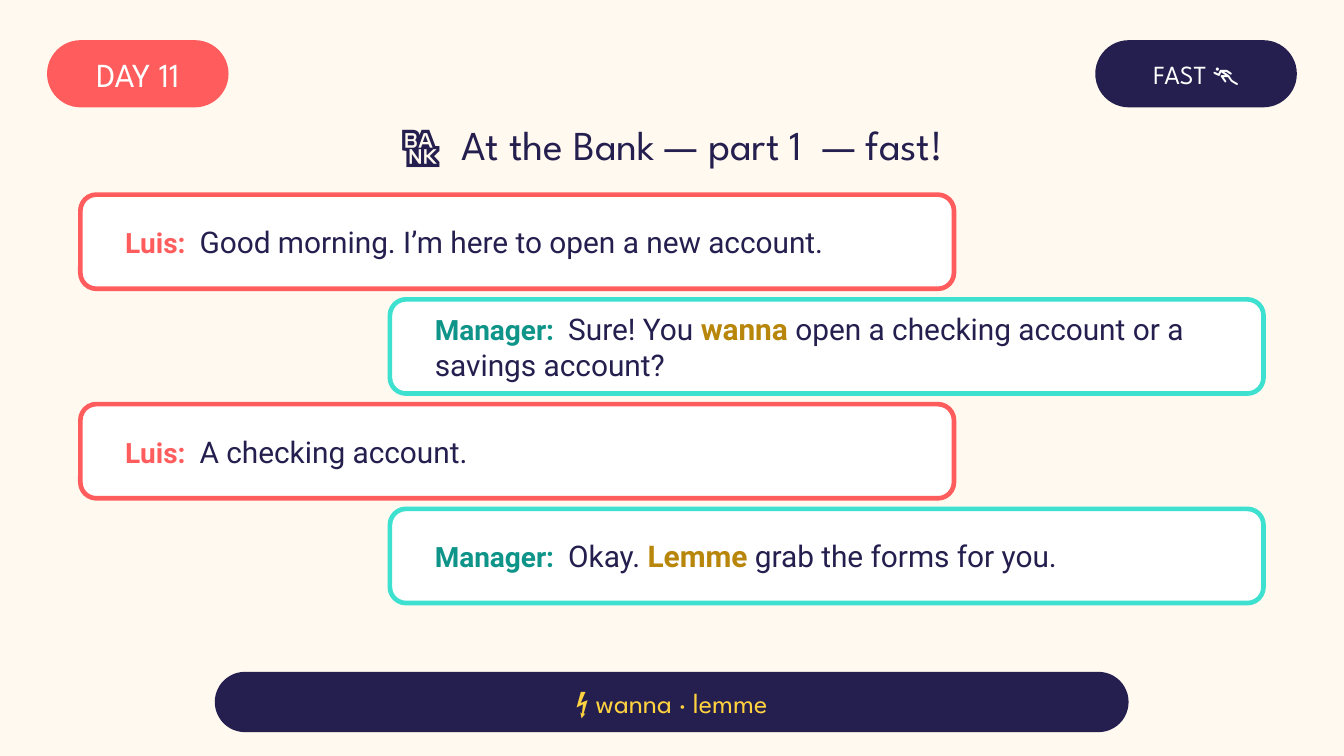
from pptx import Presentation
from pptx.dml.color import RGBColor
from pptx.enum.shapes import MSO_SHAPE as Shape
from pptx.enum.text import MSO_ANCHOR as Anchor, MSO_AUTO_SIZE as AutoSize, PP_ALIGN as Align
from pptx.util import Cm, Pt

HEADING_FONT, BODY_FONT = "League Spartan", "Roboto"
NAVY, CORAL, TURQUOISE, TEAL = "241F4E", "FF5D5D", "3EE0CF", "0E9488"
GOLD, YELLOW, WHITE, CREAM = "B8860B", "FFD23F", "FFFFFF", "FFF9EF"

# Speaker: (side of the dialogue, outline colour, name colour)
SPEAKERS = {
    "Luis": ("left", CORAL, CORAL),
    "Manager": ("right", TURQUOISE, TEAL),
}
# Each line: speaker, words before the reduced form, reduced form, words after
DIALOGUE = [
    ("Luis", "Good morning. I’m here to open a new account.", "", ""),
    ("Manager", "Sure! You ", "wanna", " open a checking account or a savings account?"),
    ("Luis", "A checking account.", "", ""),
    ("Manager", "Okay. ", "Lemme", " grab the forms for you."),
]


def rgb(value):
    return RGBColor.from_string(value)


def style(font, size, color, name=None, bold=None):
    font.size = Pt(size)
    font.color.rgb = rgb(color)
    if name:
        font.name = name
    if bold is not None:
        font.bold = bold


def add_rounded(slide, box, fill, corner, outline=None):
    """Add a rounded rectangle; box is left, top, width, height in cm."""
    rounded = slide.shapes.add_shape(Shape.ROUNDED_RECTANGLE, *map(Cm, box))
    rounded.adjustments[0] = corner
    rounded.shadow.inherit = False
    rounded.fill.solid()
    rounded.fill.fore_color.rgb = rgb(fill)
    if outline:
        rounded.line.color.rgb = rgb(outline)
        rounded.line.width = Pt(2.5)
    else:
        rounded.line.fill.background()
    return rounded


def set_frame(frame, side_inset):
    frame.word_wrap = True
    frame.vertical_anchor = Anchor.MIDDLE
    frame.margin_left = frame.margin_right = Cm(side_inset)
    frame.margin_top = frame.margin_bottom = 0


def add_pill(slide, box, label, fill, size, color=WHITE):
    frame = add_rounded(slide, box, fill, 0.5).text_frame
    set_frame(frame, 0)
    paragraph = frame.paragraphs[0]
    paragraph.text = label
    paragraph.alignment = Align.CENTER
    style(paragraph.font, size, color, HEADING_FONT)


def place_title(slide, box, wording):
    title = slide.shapes.title
    title.left, title.top, title.width, title.height = map(Cm, box)
    frame = title.text_frame
    set_frame(frame, 0.25)
    frame.auto_size = AutoSize.NONE
    paragraph = frame.paragraphs[0]
    paragraph.text = wording
    paragraph.alignment = Align.CENTER
    style(paragraph.font, 22, NAVY, HEADING_FONT)


def add_bubble(slide, box, speaker, before, reduced, after):
    _, outline, name_color = SPEAKERS[speaker]
    frame = add_rounded(slide, box, WHITE, 0.17, outline).text_frame
    set_frame(frame, 0.76)
    paragraph = frame.paragraphs[0]
    paragraph.alignment = Align.LEFT
    paragraph.font.name = BODY_FONT
    parts = [
        (f"{speaker}:  ", 15, name_color, True),
        (before, 16, NAVY, False),
        (reduced, 16, GOLD, True),
        (after, 16, NAVY, False),
    ]
    for words, size, color, bold in parts:
        if words:
            run = paragraph.add_run()
            run.text = words
            style(run.font, size, color, bold=bold)


def add_dialogue(slide, box, lines):
    """Stack the lines evenly, each on its speaker's side of the box."""
    left, top, width, height = box
    gap, bubble_width = 0.2, 16.51
    bubble_height = (height - gap * (len(lines) - 1)) / len(lines)
    for row, (speaker, *words) in enumerate(lines):
        on_right = SPEAKERS[speaker][0] == "right"
        bubble_left = left + width - bubble_width if on_right else left
        bubble_top = top + row * (bubble_height + gap)
        bubble = (bubble_left, bubble_top, bubble_width, bubble_height)
        add_bubble(slide, bubble, speaker, *words)


def main():
    deck = Presentation()
    deck.slide_width, deck.slide_height = Cm(25.4), Cm(14.29)
    slide = deck.slides.add_slide(deck.slide_layouts[5])
    slide.background.fill.solid()
    slide.background.fill.fore_color.rgb = rgb(CREAM)

    add_pill(slide, (0.89, 0.76, 3.43, 1.27), "DAY 11", CORAL, 18)
    add_pill(slide, (20.7, 0.76, 3.81, 1.27), "FAST 🏃", NAVY, 14)
    place_title(slide, (0, 2.08, 25.4, 1.27), "🏦  At the Bank — part 1  — fast!")
    add_dialogue(slide, (1.52, 3.68, 22.36, 7.72), DIALOGUE)
    add_pill(slide, (4.06, 12.7, 17.27, 1.14), "⚡ wanna · lemme", NAVY, 15, YELLOW)
    deck.save("out.pptx")


if __name__ == "__main__":
    main()
